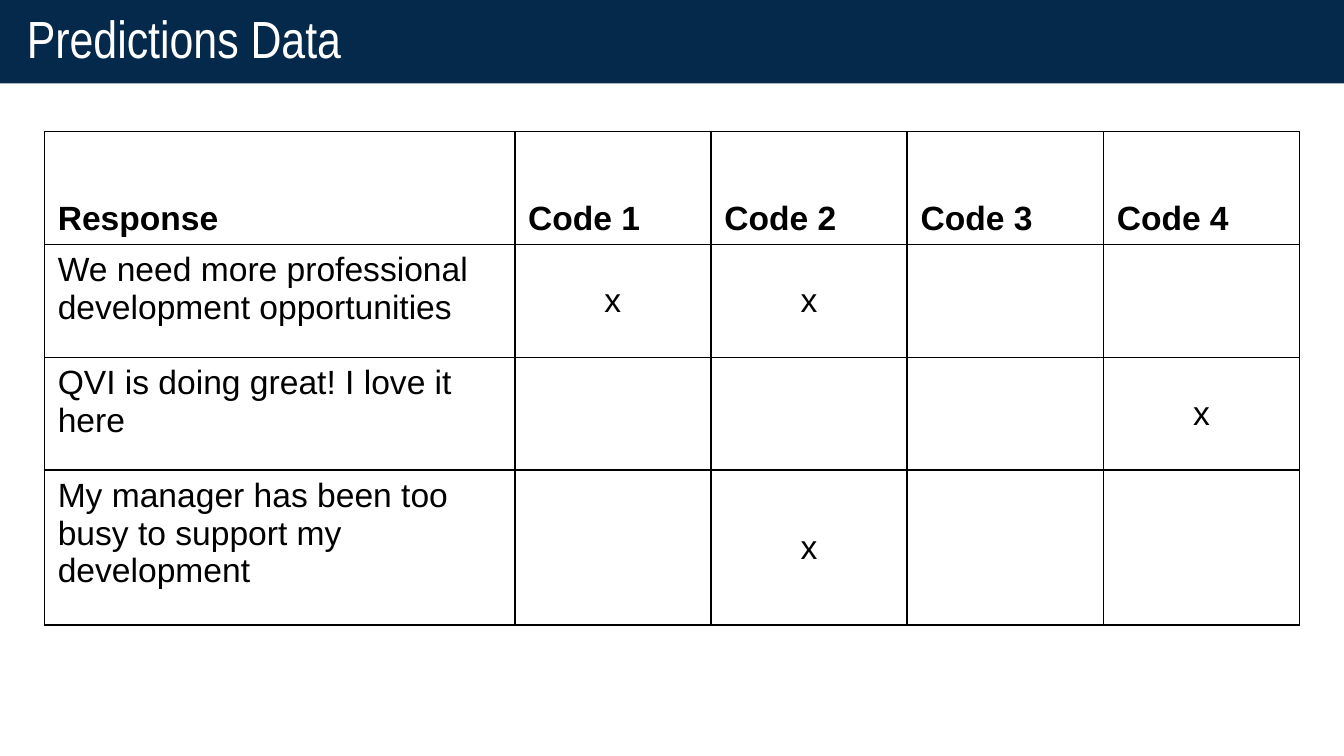
from lxml import etree
from pptx import Presentation
from pptx.dml.color import RGBColor
from pptx.enum.text import MSO_ANCHOR, PP_ALIGN
from pptx.oxml.ns import qn
from pptx.util import Inches, Pt

TOP, MIDDLE, BOTTOM = MSO_ANCHOR.TOP, MSO_ANCHOR.MIDDLE, MSO_ANCHOR.BOTTOM
LEFT, CENTER = PP_ALIGN.LEFT, PP_ALIGN.CENTER

# Content
TITLE = "Predictions Data"
CODES = ["Code 1", "Code 2", "Code 3", "Code 4"]
RESPONSES = [
    ("We need more professional development opportunities", ["Code 1", "Code 2"]),
    ("QVI is doing great! I love it here", ["Code 4"]),
    ("My manager has been too busy to support my development", ["Code 2"]),
]
NAVY, WHITE, BLACK = "04294A", "FFFFFF", "000000"
SLIDE_WIDTH = 10
SLIDE_HEIGHT = SLIDE_WIDTH * 9 / 16
COL_WIDTHS = [3.5] + [1.46] * len(CODES)
ROW_HEIGHTS = [0.84, 0.84, 0.84, 1.15]


def rgb(value):
    return RGBColor.from_string(value)


def style_text(p, font, size, color, bold=False):
    for r in p.runs:
        r.font.name = font
        r.font.size = Pt(size)
        r.font.bold = bold
        r.font.color.rgb = rgb(color)


def add_borders(cell, color, width):
    tc_pr = cell._tc.get_or_add_tcPr()
    for i, side in enumerate(("lnL", "lnR", "lnT", "lnB")):
        ln = etree.Element(qn(f"a:{side}"), w=str(Pt(width)))
        fill = etree.SubElement(ln, qn("a:solidFill"))
        etree.SubElement(fill, qn("a:srgbClr"), val=color)
        tc_pr.insert(i, ln)  # borders come before the cell fill


def fill_cell(cell, text, anchor, align, bold):
    cell.text = text
    cell.vertical_anchor = anchor
    cell.fill.background()
    p = cell.text_frame.paragraphs[0]
    p.alignment = align
    p.font.size = Pt(18)
    style_text(p, "Arial", 18, BLACK, bold)
    add_borders(cell, BLACK, 1)


prs = Presentation()
prs.slide_width, prs.slide_height = Inches(SLIDE_WIDTH), Inches(SLIDE_HEIGHT)
s = prs.slides.add_slide(prs.slide_layouts[5])

# Title bar
title = s.shapes.title
title.left, title.top = Inches(0), Inches(0)
title.width, title.height = Inches(SLIDE_WIDTH), Inches(0.62)
title.fill.solid()
title.fill.fore_color.rgb = rgb(NAVY)
tf = title.text_frame
tf.text = TITLE
tf.vertical_anchor = MIDDLE
tf.margin_left = tf.margin_right = Inches(0.2)
tf.margin_top = tf.margin_bottom = Inches(0.1)
p = tf.paragraphs[0]
p.alignment = LEFT
p.line_spacing = 0.9
style_text(p, "Arial Narrow", 28, WHITE)

# Table of responses and the codes predicted for each
rows = [["Response"] + CODES]
for response, marked in RESPONSES:
    rows.append([response] + ["x" if code in marked else "" for code in CODES])

table = s.shapes.add_table(
    len(rows), len(COL_WIDTHS), Inches(0.33), Inches(0.98),
    Inches(sum(COL_WIDTHS)), Inches(sum(ROW_HEIGHTS))).table
table.first_row = table.horz_banding = False
for column, width in zip(table.columns, COL_WIDTHS):
    column.width = Inches(width)
for row, height in zip(table.rows, ROW_HEIGHTS):
    row.height = Inches(height)

for i, row in enumerate(rows):
    for j, text in enumerate(row):
        if i == 0:
            anchor, align = BOTTOM, LEFT
        elif j == 0:
            anchor, align = TOP, LEFT
        else:
            anchor, align = MIDDLE, CENTER
        fill_cell(table.cell(i, j), text, anchor, align, bold=i == 0)

prs.save("out.pptx")
